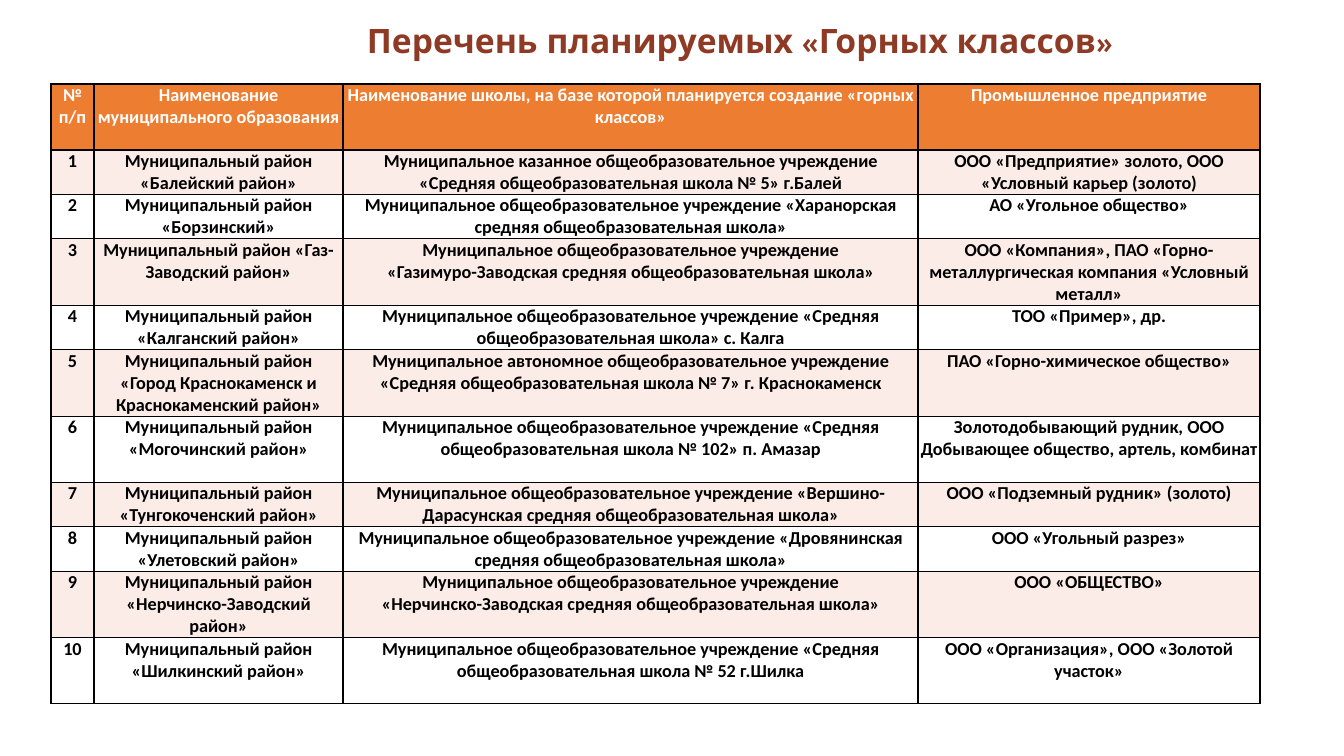
from dataclasses import dataclass
from itertools import product

from lxml.etree import SubElement
from pptx import Presentation
from pptx.dml.color import RGBColor as RGB
from pptx.enum.text import MSO_ANCHOR as ANCHOR, MSO_AUTO_SIZE as FIT, PP_ALIGN as ALIGN
from pptx.oxml.ns import qn
from pptx.util import Pt

TITLE = "Перечень планируемых «Горных классов»"
HEADER = (
    "№\nп/п",
    "Наименование муниципального образования",
    "Наименование школы, на базе которой планируется создание «горных классов»",
    "Промышленное предприятие",
)
CLASSES = [
    ("Муниципальный район «Балейский район»",
     "Муниципальное казанное общеобразовательное учреждение «Средняя общеобразовательная школа № 5» г.Балей",
     "ООО «Предприятие» золото, ООО «Условный карьер (золото)"),
    ("Муниципальный район «Борзинский»",
     "Муниципальное общеобразовательное учреждение «Харанорская средняя общеобразовательная школа»",
     "АО «Угольное общество»"),
    ("Муниципальный район «Газ-Заводский район»",
     "Муниципальное общеобразовательное учреждение\n«Газимуро-Заводская средняя общеобразовательная школа»",
     "ООО «Компания», ПАО «Горно-металлургическая компания «Условный металл»"),
    ("Муниципальный район «Калганский район»",
     "Муниципальное общеобразовательное учреждение «Средняя общеобразовательная школа» с. Калга",
     "ТОО «Пример», др."),
    ("Муниципальный район «Город Краснокаменск и Краснокаменский район»",
     "Муниципальное автономное общеобразовательное учреждение «Средняя общеобразовательная школа № 7» г. Краснокаменск",
     "ПАО «Горно-химическое общество»"),
    ("Муниципальный район «Могочинский район»",
     "Муниципальное общеобразовательное учреждение «Средняя общеобразовательная школа № 102» п. Амазар",
     "Золотодобывающий рудник, ООО Добывающее общество, артель, комбинат"),
    ("Муниципальный район «Тунгокоченский район»",
     "Муниципальное общеобразовательное учреждение «Вершино-Дарасунская средняя общеобразовательная школа»",
     "ООО «Подземный рудник» (золото)"),
    ("Муниципальный район «Улетовский район»",
     "Муниципальное общеобразовательное учреждение «Дровянинская средняя общеобразовательная школа»",
     "ООО «Угольный разрез»"),
    ("Муниципальный район «Нерчинско-Заводский район»",
     "Муниципальное общеобразовательное учреждение\n«Нерчинско-Заводская средняя общеобразовательная школа»",
     "OOO «ОБЩЕСТВО»"),
    ("Муниципальный район «Шилкинский район»",
     "Муниципальное общеобразовательное учреждение «Средняя общеобразовательная школа № 52 г.Шилка",
     "ООО «Организация», ООО «Золотой участок»"),
]
COL_WIDTHS = (43, 249, 575, 342)
ROW_LINES = (3, 2, 2, 3, 2, 3, 3, 2, 2, 3, 3)
LINE_HEIGHT = 22


@dataclass(frozen=True)
class Theme:
    title: RGB = RGB.from_string("8E3A25")
    header: RGB = RGB.from_string("ED7D31")
    band: RGB = RGB.from_string("FCECE8")
    white: RGB = RGB.from_string("FFFFFF")
    black: RGB = RGB.from_string("000000")
    title_font: str = "League Spartan"
    table_font: str = "Calibri"
    title_size: int = 24
    table_size: int = 13


THEME = Theme()


def px(n):
    return round(n * 914400 / 100.8)


def write(tf, text, name, size, color):
    tf.text = text
    for p in tf.paragraphs:
        p.alignment = ALIGN.CENTER
        f = p.font
        f.name, f.size, f.bold = name, Pt(size), True
        f.color.rgb = color


def add_borders(cell):
    tc_pr = cell._tc.get_or_add_tcPr()
    for i, side in enumerate("LRTB"):
        ln = SubElement(tc_pr, qn(f"a:ln{side}"), w=str(Pt(1)))
        fill = SubElement(ln, qn("a:solidFill"))
        SubElement(fill, qn("a:srgbClr"), val=str(THEME.black))
        tc_pr.insert(i, ln)


def add_title(slide):
    sp = slide.shapes.title
    sp.left, sp.top, sp.width, sp.height = map(px, (169, 15, 1142, 56))
    tf = sp.text_frame
    write(tf, TITLE, THEME.title_font, THEME.title_size, THEME.title)
    tf.vertical_anchor = ANCHOR.TOP
    tf.auto_size = FIT.NONE
    tf.word_wrap = True


def add_class_table(slide):
    rows = [HEADER] + [(str(n), *entry) for n, entry in enumerate(CLASSES, 1)]
    heights = [lines * LINE_HEIGHT for lines in ROW_LINES]
    box = map(px, (51, 84, sum(COL_WIDTHS), sum(heights)))
    table = slide.shapes.add_table(len(rows), len(HEADER), *box).table
    table.horz_banding = False
    for col, width in zip(table.columns, COL_WIDTHS):
        col.width = px(width)
    for row, height in zip(table.rows, heights):
        row.height = px(height)
    for r, c in product(range(len(rows)), range(len(HEADER))):
        cell = table.cell(r, c)
        cell.margin_left = cell.margin_right = px(2)
        cell.margin_top = cell.margin_bottom = 0
        cell.fill.solid()
        cell.fill.fore_color.rgb = THEME.header if r == 0 else THEME.band if r % 2 else THEME.white
        add_borders(cell)
        color = THEME.black if r else THEME.white
        write(cell.text_frame, rows[r][c], THEME.table_font, THEME.table_size, color)


def main():
    prs = Presentation()
    prs.slide_width, prs.slide_height = px(1344), px(756)
    slide = prs.slides.add_slide(prs.slide_layouts[5])
    add_title(slide)
    add_class_table(slide)
    prs.save("out.pptx")


if __name__ == "__main__":
    main()
